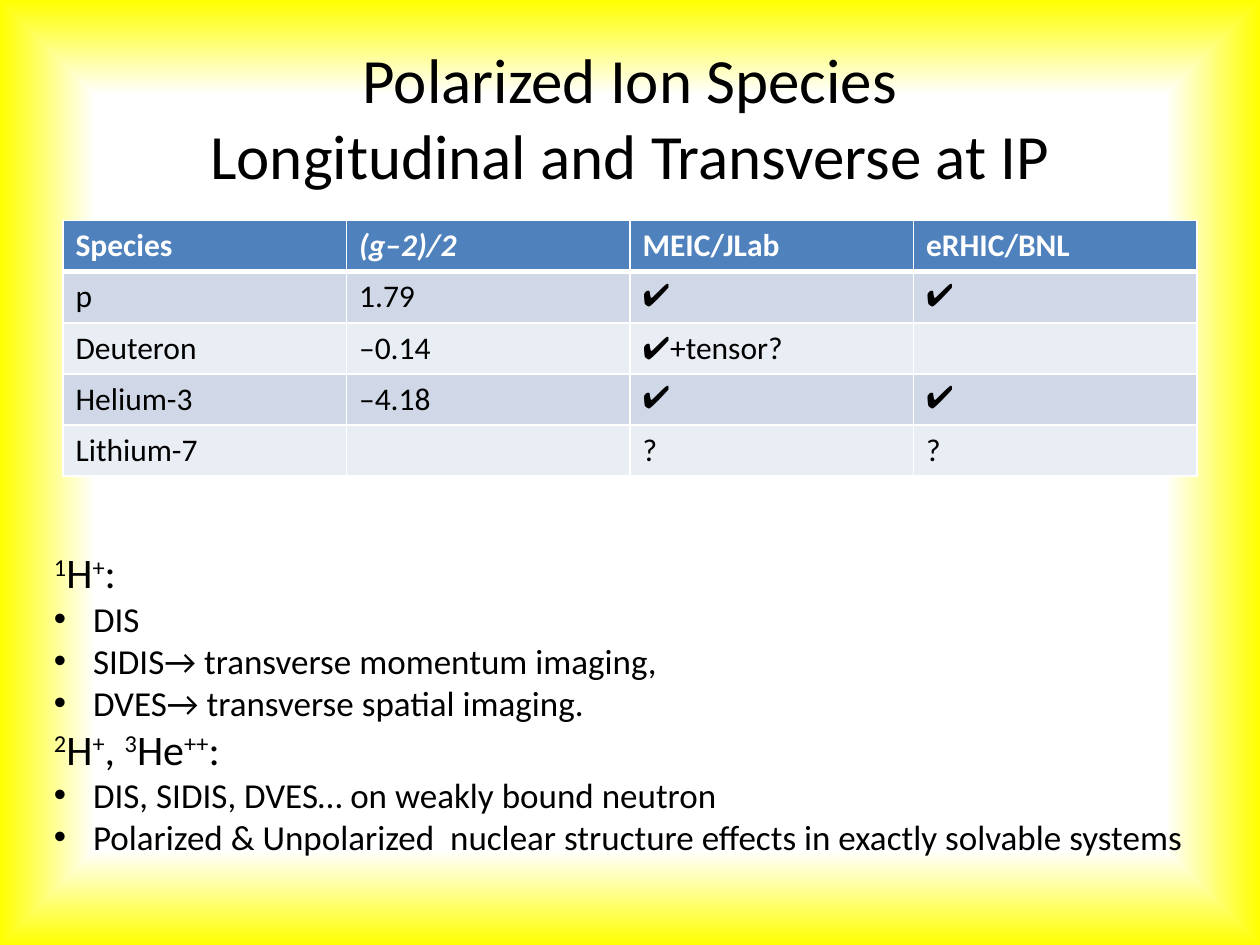
import pptx
import pptx.dml.color
import pptx.enum.text
import pptx.oxml
import pptx.oxml.ns
import pptx.util
from pptx.util import Inches, Pt

COLORS = {
    "text": "000000",
    "white": "FFFFFF",
    "glow": "FFFF00",
    "header": "4F81BD",
    "odd": "D0D8E8",
    "even": "E9EDF4",
}
A_NS = pptx.oxml.ns.nsdecls("a")
CHECK = "✔"
SPECIES = [
    ["Species", "(g–2)/2", "MEIC/JLab", "eRHIC/BNL"],
    ["p", "1.79", CHECK, CHECK],
    ["Deuteron", "–0.14", CHECK + "+tensor?", ""],
    ["Helium-3", "–4.18", CHECK, CHECK],
    ["Lithium-7", "", "?", "?"],
]
# Each topic: heading pieces as (text, is superscript), then its bullets
TOPICS = [
    (
        [("1", True), ("H", False), ("+", True), (":", False)],
        [
            "DIS",
            "SIDIS→ transverse momentum imaging,",
            "DVES→ transverse spatial imaging.",
        ],
    ),
    (
        [("2", True), ("H", False), ("+", True), (", ", False),
         ("3", True), ("He", False), ("++", True), (":", False)],
        [
            "DIS, SIDIS, DVES… on weakly bound neutron",
            "Polarized & Unpolarized  nuclear structure effects in exactly solvable systems",
        ],
    ),
]


def rgb(name):
    return pptx.dml.color.RGBColor.from_string(COLORS[name])


class SlideBuilder:
    font_name = "Calibri"
    symbol_font = "Arial"

    def __init__(self, page):
        self.page = page

    def style(self, font, size, color="text", bold=False, italic=False):
        font.name = self.font_name
        font.size = Pt(size)
        font.bold = bold
        font.italic = italic
        font.color.rgb = rgb(color)

    def place(self, shape, left, top, width, height):
        shape.left, shape.top = Inches(left), Inches(top)
        shape.width, shape.height = Inches(width), Inches(height)

    def background(self):
        """Fill the page white, glowing yellow towards its edges."""
        self.page.background.fill.solid()
        solid = self.page.element.find(".//" + pptx.oxml.ns.qn("a:solidFill"))
        stops = "".join(
            f'<a:gs pos="{position}"><a:srgbClr val="{COLORS[name]}"/></a:gs>'
            for position, name in [(0, "white"), (80000, "white"), (100000, "glow")]
        )
        gradient = pptx.oxml.parse_xml(
            f'<a:gradFill {A_NS} rotWithShape="1"><a:gsLst>{stops}</a:gsLst>'
            '<a:path path="rect"><a:fillToRect l="50000" t="50000" r="50000" b="50000"/>'
            "</a:path></a:gradFill>"
        )
        solid.getparent().replace(solid, gradient)

    def title(self, lines, *place):
        title = self.page.shapes.title
        self.place(title, *place)
        frame = title.text_frame
        frame.vertical_anchor = pptx.enum.text.MSO_ANCHOR.MIDDLE
        para = frame.paragraphs[0]
        para.text = "\v".join(lines)
        para.alignment = pptx.enum.text.PP_ALIGN.CENTER
        self.style(para.font, 36)

    def cell_borders(self, cell, bottom):
        properties = cell._tc.get_or_add_tcPr()
        for index, (side, points) in enumerate(
            [("L", 1), ("R", 1), ("T", 1), ("B", bottom)]
        ):
            line = pptx.oxml.parse_xml(
                f'<a:ln{side} {A_NS} w="{Pt(points)}"><a:solidFill>'
                f'<a:srgbClr val="{COLORS["white"]}"/></a:solidFill></a:ln{side}>'
            )
            properties.insert(index, line)

    def table(self, rows, left, top, width, height):
        table = self.page.shapes.add_table(
            len(rows), len(rows[0]),
            Inches(left), Inches(top), Inches(width), Inches(height),
        ).table
        for row_index, row in enumerate(rows):
            header = row_index == 0
            fill = "header" if header else ("even", "odd")[row_index % 2]
            for column_index, text in enumerate(row):
                cell = table.cell(row_index, column_index)
                cell.fill.solid()
                cell.fill.fore_color.rgb = rgb(fill)
                self.cell_borders(cell, 3 if header else 1)
                para = cell.text_frame.paragraphs[0]
                self.style(para.font, 18, "white" if header else "text",
                           bold=header, italic=header and column_index == 1)
                if text.startswith(CHECK):
                    mark = para.add_run()
                    mark.text = CHECK
                    mark.font.name = self.symbol_font
                    text = text.removeprefix(CHECK)
                if text:
                    para.add_run().text = text

    def heading(self, para, pieces):
        self.style(para.font, 24)
        for text, raised in pieces:
            span = para.add_run()
            span.text = text
            if raised:
                span.font._element.set("baseline", "30000")

    def bullet(self, para, text):
        para.text = text
        self.style(para.font, 20)
        properties = para._p.get_or_add_pPr()
        indent = Inches(0.31)
        properties.set("marL", str(indent))
        properties.set("indent", str(-indent))
        marker = [
            f'<a:buFont {A_NS} typeface="{self.symbol_font}"/>',
            f'<a:buChar {A_NS} char="•"/>',
        ]
        for index, xml in enumerate(marker):
            properties.insert(index, pptx.oxml.parse_xml(xml))

    def topics(self, topics, left, top, width, height):
        box = self.page.shapes.add_textbox(
            Inches(left), Inches(top), Inches(width), Inches(height)
        )
        frame = box.text_frame
        frame.word_wrap = True
        para = frame.paragraphs[0]
        for index, (pieces, bullets) in enumerate(topics):
            if index:
                para = frame.add_paragraph()
            self.heading(para, pieces)
            for text in bullets:
                self.bullet(frame.add_paragraph(), text)


def main():
    deck = pptx.Presentation()
    deck.slide_width, deck.slide_height = Inches(10), Inches(7.5)
    title_only = deck.slide_layouts[5]
    builder = SlideBuilder(deck.slides.add_slide(title_only))
    builder.background()
    builder.title(
        ["Polarized Ion Species", "Longitudinal and Transverse at IP"],
        0.5, 0.3, 9, 1.25,
    )
    builder.table(SPECIES, 0.5, 1.75, 9, 2.03)
    builder.topics(TOPICS, 0.33, 4.29, 9.28, 2.89)
    deck.save("out.pptx")


if __name__ == "__main__":
    main()
